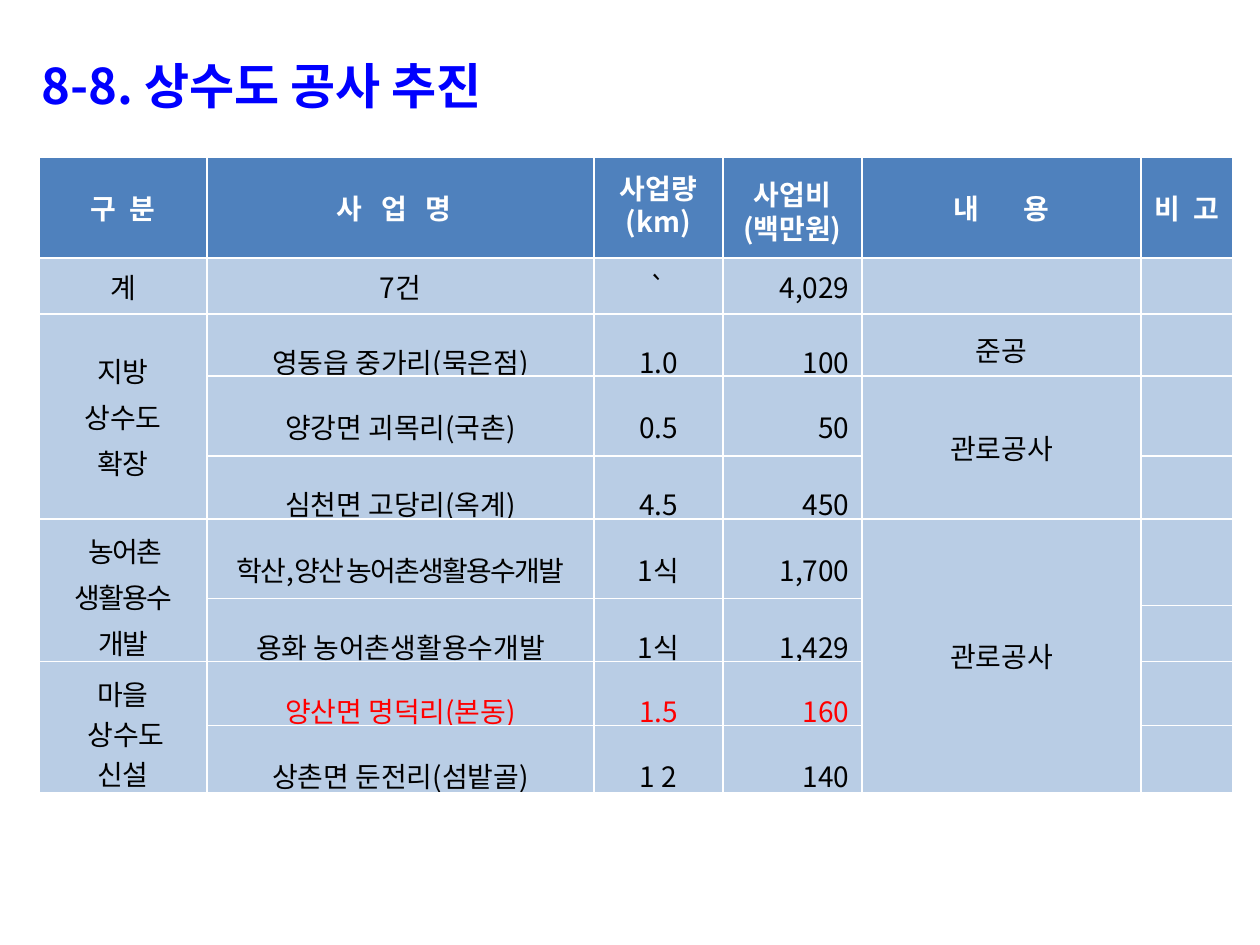
from dataclasses import dataclass

from pptx import Presentation
from pptx.dml.color import RGBColor
from pptx.enum.text import MSO_ANCHOR, PP_ALIGN
from pptx.oxml.ns import qn
from pptx.util import Emu, Pt
from lxml import etree

LEFT, CENTER, RIGHT = PP_ALIGN.LEFT, PP_ALIGN.CENTER, PP_ALIGN.RIGHT
MIDDLE = MSO_ANCHOR.MIDDLE
PX = 914400 // 126
TITLE_ONLY = 5


@dataclass(frozen=True)
class Theme:
    font: str = "Noto Sans CJK KR"
    title_size: int = 28
    table_size: int = 16
    title: str = "0000FF"
    header_fill: str = "4F81BD"
    body_fill: str = "B9CDE5"
    border: str = "FFFFFF"
    header_text: str = "FFFFFF"
    body_text: str = "000000"
    highlight: str = "FF0000"


THEME = Theme()

COL_WIDTHS = [168, 387, 129, 139, 279, 92]
ROW_HEIGHTS = [101, 56, 62, 80, 63, 80, 7, 56, 64, 67]

# Cells covered by a merge stay empty; "\n" starts a new paragraph
ROWS = [
    ["구  분", "사   업   명  ", "사업량\n(km)", "사업비\n(백만원)", "내       용", "비  고"],
    ["계", "7건", "`", "4,029", "", ""],
    ["지방\n상수도\n확장", "영동읍 중가리(묵은점)", "1.0", "100", "준공", ""],
    ["", "양강면 괴목리(국촌)", "0.5", "50", "관로공사", ""],
    ["", "심천면 고당리(옥계)", "4.5", "450", "", ""],
    [" 농어촌\n생활용수\n개발", "학산,양산 농어촌생활용수개발", "1식", "1,700", "관로공사", ""],
    ["", "용화 농어촌생활용수개발", "1식", "1,429", "", ""],
    ["", "", "", "", "", ""],
    ["마을\n 상수도\n신설", "양산면 명덕리(본동)", "1.5", "160", "", ""],
    ["", "상촌면 둔전리(섬밭골)", "1 2", "140", "", ""],
]

# (row, column, last row) of each vertical merge
MERGES = [(2, 0, 4), (3, 4, 4), (5, 0, 7), (5, 4, 9), (5, 5, 6),
          (6, 1, 7), (6, 2, 7), (6, 3, 7), (8, 0, 9)]
HIGHLIGHT_ROW = 8
TIGHT_CELLS = {(5, 0), (5, 1)}
NO_SPACE_BEFORE = {(3, 4), (8, 0), (8, 2), (8, 3), (9, 2), (9, 3)}

# Cells whose text reaches past the lower edge, so the row must not grow
OVERFLOW_CELLS = {(0, 3), (5, 0), (8, 0)} | {
    (row, col) for row in (2, 4, 6, 8, 9) for col in (1, 2, 3)}
OVERFLOW_MARGIN = -6


def px(n):
    return Emu(n * PX)


def format_run(r, size, color, bold, spacing=0):
    r.font.size = Pt(size)
    r.font.bold = bold
    r.font.name = THEME.font
    r.font.color.rgb = RGBColor.from_string(color)
    rPr = r.font._element
    etree.SubElement(rPr, qn("a:ea"), typeface=THEME.font)
    if spacing:
        rPr.set("spc", str(spacing * 100))


def add_title(s, text):
    sp = s.shapes.title
    sp.left, sp.top, sp.width, sp.height = px(29), px(49), px(525), px(72)
    tf = sp.text_frame
    tf.text = text
    tf.word_wrap = True
    tf.vertical_anchor = MIDDLE
    p = tf.paragraphs[0]
    p.alignment = LEFT
    format_run(p.runs[0], THEME.title_size, THEME.title, True)


def set_borders(cell):
    tcPr = cell._tc.get_or_add_tcPr()
    for side in ("lnL", "lnR", "lnT", "lnB"):
        ln = etree.SubElement(tcPr, qn(f"a:{side}"), w=str(Pt(1)))
        fill = etree.SubElement(ln, qn("a:solidFill"))
        etree.SubElement(fill, qn("a:srgbClr"), val=THEME.border)


def line_spacing(row, col):
    if row == 0:
        return 0.7 if col in (2, 3) else None
    if row >= 2 and col in (1, 2, 3):
        return 1.5
    return 1.2 if (row, col) == (2, 4) else None


def text_color(row, col):
    if row == 0:
        return THEME.header_text
    if row == HIGHLIGHT_ROW and col > 0:
        return THEME.highlight
    return THEME.body_text


def fill_cell(cell, row, col, text):
    set_borders(cell)
    cell.fill.solid()
    fill = THEME.header_fill if row == 0 else THEME.body_fill
    cell.fill.fore_color.rgb = RGBColor.from_string(fill)
    cell.vertical_anchor = MIDDLE
    if (row, col) in OVERFLOW_CELLS:
        cell.margin_bottom = px(OVERFLOW_MARGIN)
    cell.text_frame.text = text
    for p in cell.text_frame.paragraphs:
        if not p.runs:
            # An empty cell keeps the table's type size
            etree.SubElement(p._p, qn("a:endParaRPr"), sz=str(THEME.table_size * 100))
            continue
        p.alignment = RIGHT if col == 3 and row > 0 else CENTER
        p.line_spacing = line_spacing(row, col)
        if (row, col) not in NO_SPACE_BEFORE:
            p.space_before = Pt(THEME.table_size * 0.2)
        spacing = -1 if (row, col) in TIGHT_CELLS else 0
        for r in p.runs:
            format_run(r, THEME.table_size, text_color(row, col), row == 0, spacing)


def add_works_table(s):
    frame = s.shapes.add_table(len(ROWS), len(COL_WIDTHS), px(39), px(157),
                               px(sum(COL_WIDTHS)), px(sum(ROW_HEIGHTS)))
    table = frame.table
    for column, width in zip(table.columns, COL_WIDTHS):
        column.width = px(width)
    for table_row, height in zip(table.rows, ROW_HEIGHTS):
        table_row.height = px(height)
    for row, texts in enumerate(ROWS):
        for col, text in enumerate(texts):
            fill_cell(table.cell(row, col), row, col, text)
    for row, col, last in MERGES:
        table.cell(row, col).merge(table.cell(last, col))


def main():
    prs = Presentation()
    prs.slide_width, prs.slide_height = px(1260), px(945)
    s = prs.slides.add_slide(prs.slide_layouts[TITLE_ONLY])
    add_title(s, "8-8. 상수도 공사 추진")
    add_works_table(s)
    prs.save("out.pptx")


if __name__ == "__main__":
    main()
